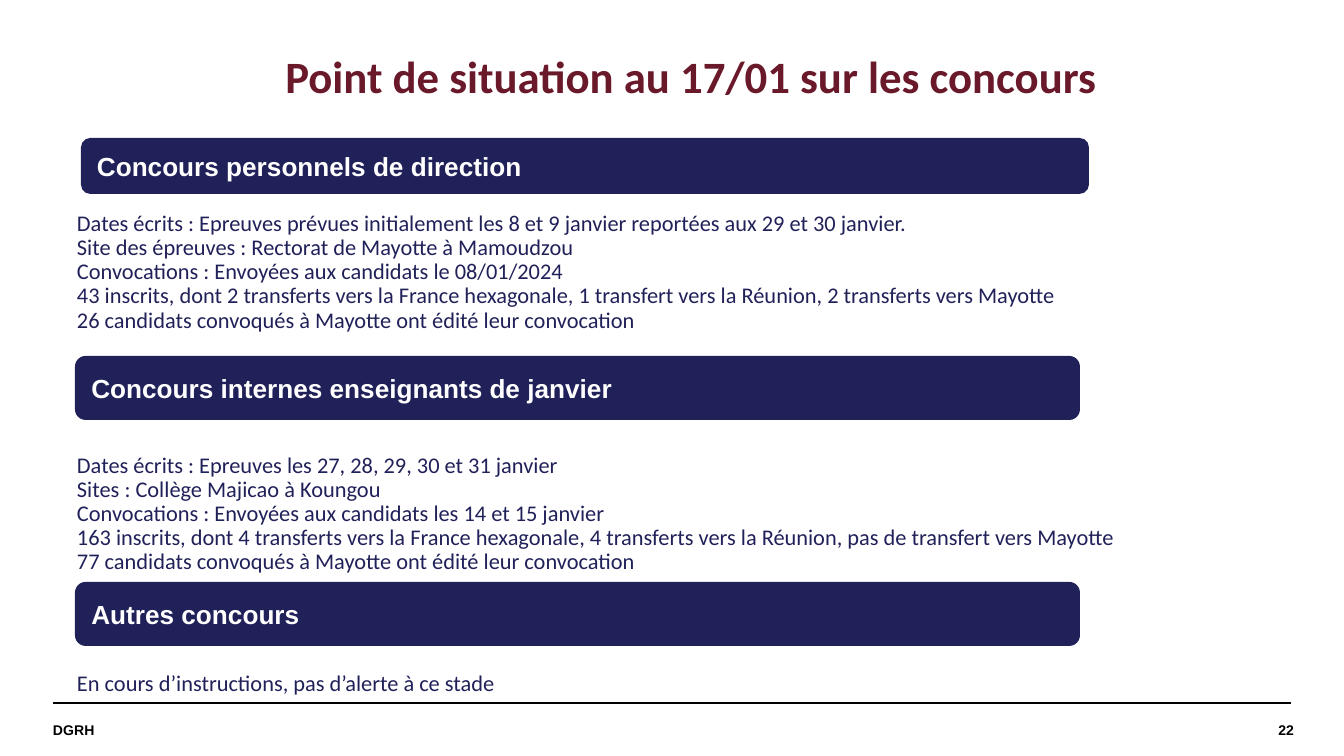
from pptx import Presentation, util as u
from pptx.dml.color import RGBColor
from pptx.enum import shapes, text
from pptx.oxml.ns import qn
from lxml import etree

TITLE = "Point de situation au 17/01 sur les concours"
FOOTER, PAGE_NUMBER = "DGRH", "22"

# heading, bar (left, top, width, height) in px
BARS = [
    ("Concours personnels de direction", (81, 138, 1008, 56)),
    ("Concours internes enseignants de janvier", (75, 356, 1005, 64)),
    ("Autres concours", (75, 582, 1005, 64)),
]
# gap above the group in px, then its lines
DETAILS = [
    (0, [
        "Dates écrits : Epreuves prévues initialement les 8 et 9 janvier reportées aux 29 et 30 janvier.",
        "Site des épreuves : Rectorat de Mayotte à Mamoudzou",
        "Convocations : Envoyées aux candidats le 08/01/2024",
        "43 inscrits, dont 2 transferts vers la France hexagonale, 1 transfert vers la Réunion, 2 transferts vers Mayotte",
        "26 candidats convoqués à Mayotte ont édité leur convocation",
    ]),
    (121, [
        "Dates écrits : Epreuves les 27, 28, 29, 30 et 31 janvier",
        "Sites : Collège Majicao à Koungou",
        "Convocations : Envoyées aux candidats les 14 et 15 janvier",
        "163 inscrits, dont 4 transferts vers la France hexagonale, 4 transferts vers la Réunion, pas de transfert vers Mayotte",
        "77 candidats convoqués à Mayotte ont édité leur convocation",
    ]),
    (97, ["En cours d’instructions, pas d’alerte à ce stade"]),
]


class Theme:
    navy = RGBColor.from_string("21215A")
    wine = RGBColor.from_string("691929")
    black = RGBColor.from_string("000000")
    white = RGBColor.from_string("FFFFFF")
    # font name, size in points, bold, colour
    title = ("Calibri", 24, True, wine)
    heading = ("Arial", 14, True, white)
    body = ("Calibri", 12, False, navy)
    footer = ("Arial", 7.5, True, black)


def px(value):
    return u.Emu(round(value * 914400 / 134.4))


def style(paragraph, look, align=text.PP_ALIGN.LEFT):
    font = paragraph.font
    font.name, size, font.bold, font.color.rgb = look
    font.size = u.Pt(size)
    paragraph.alignment = align


def add_text(slide, box, words, look, align=text.PP_ALIGN.LEFT,
             anchor=text.MSO_ANCHOR.TOP, inset=0):
    frame = slide.shapes.add_textbox(*map(px, box)).text_frame
    frame.word_wrap = True
    frame.vertical_anchor = anchor
    frame.margin_left = frame.margin_right = px(inset)
    frame.margin_top = frame.margin_bottom = px(inset / 2)
    frame.text = words
    for paragraph in frame.paragraphs:
        style(paragraph, look, align)
    return frame


def add_bar(slide, heading, box):
    bar = slide.shapes.add_shape(shapes.MSO_SHAPE.ROUNDED_RECTANGLE, *map(px, box))
    bar.shadow.inherit = False
    bar.fill.solid()
    bar.fill.fore_color.rgb = Theme.navy
    bar.line.fill.background()
    bar.text_frame.vertical_anchor = text.MSO_ANCHOR.MIDDLE
    bar.text_frame.text = heading
    style(bar.text_frame.paragraphs[0], Theme.heading)


def add_details(slide):
    lines = [(gap if index == 0 else 0, line)
             for gap, group in DETAILS for index, line in enumerate(group)]
    frame = add_text(slide, (77, 212, 1240, 547),
                     "\n".join(line for _, line in lines), Theme.body)
    for paragraph, (gap, _) in zip(frame.paragraphs, lines):
        paragraph.line_spacing = 0.9
        if gap:
            paragraph.space_before = px(gap)


def add_footer(slide):
    rule = slide.shapes.add_connector(
        shapes.MSO_CONNECTOR.STRAIGHT, px(53), px(703), px(1291), px(703))
    rule.line.color.rgb = Theme.black
    rule.line.width = u.Pt(0.8)
    etree.SubElement(rule._element.spPr, qn("a:effectLst"))
    middle = text.MSO_ANCHOR.MIDDLE
    add_text(slide, (53, 703, 868, 53), FOOTER, Theme.footer, anchor=middle)
    add_text(slide, (1095, 704, 199, 52), PAGE_NUMBER, Theme.footer,
             text.PP_ALIGN.RIGHT, middle)


def main():
    presentation = Presentation()
    presentation.slide_width, presentation.slide_height = px(1344), px(756)
    slide = presentation.slides.add_slide(presentation.slide_layouts[6])
    add_footer(slide)
    add_details(slide)
    add_text(slide, (183, 42, 1016, 60), TITLE, Theme.title,
             text.PP_ALIGN.CENTER, inset=13)
    for heading, box in BARS:
        add_bar(slide, heading, box)
    presentation.save("out.pptx")


if __name__ == "__main__":
    main()
